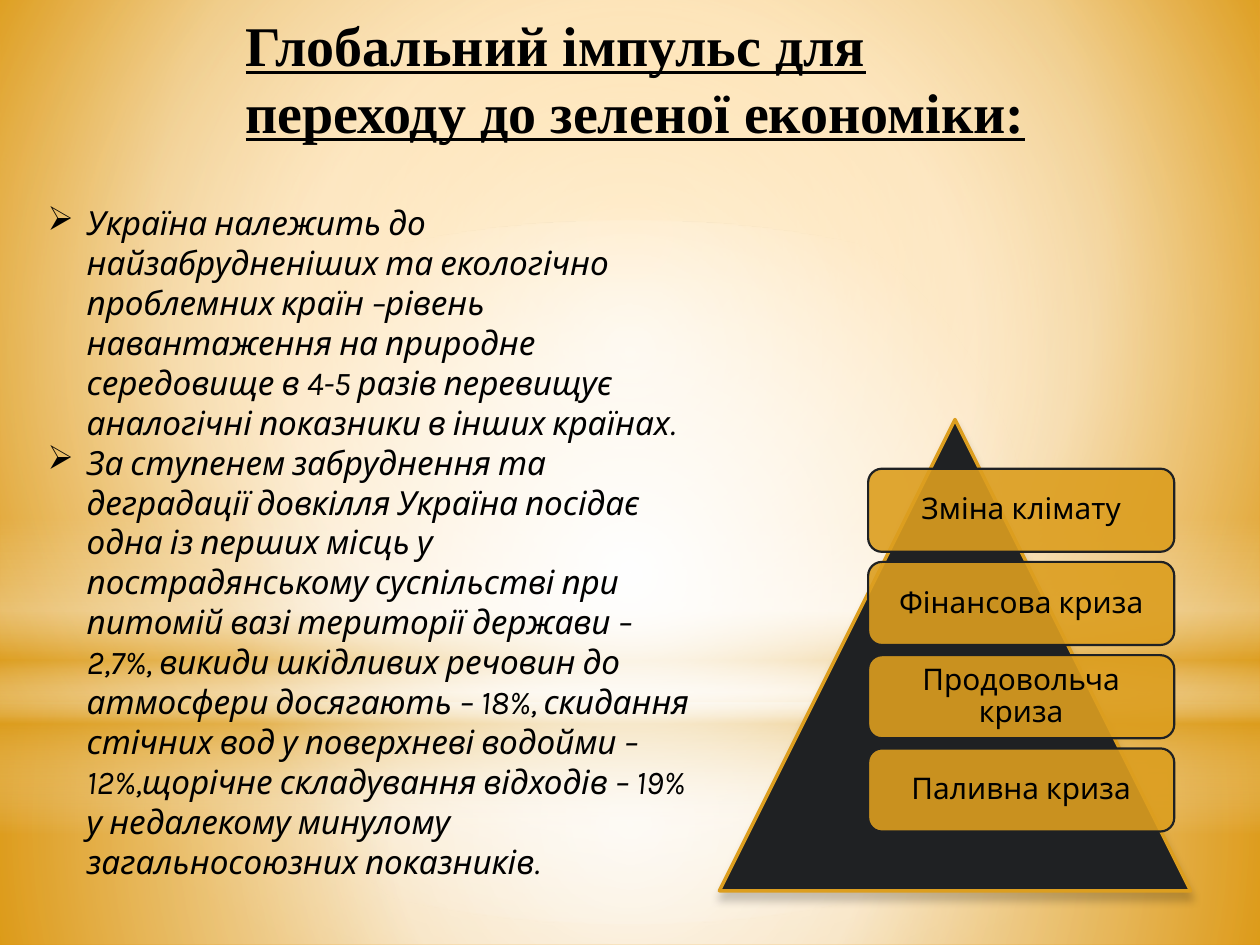
"""Build the slide on the global impulse for the transition to a green economy."""
from dataclasses import dataclass
from typing import Any, NamedTuple

from lxml.etree import SubElement
from pptx import Presentation
from pptx.dml.color import RGBColor
from pptx.enum.shapes import MSO_SHAPE as Shape
from pptx.enum.text import MSO_ANCHOR as Anchor, MSO_AUTO_SIZE as AutoSize, PP_ALIGN as Align
from pptx.oxml.ns import qn
from pptx.oxml.xmlchemy import OxmlElement
from pptx.util import Inches, Pt

WHITE = RGBColor(0xFF, 0xFF, 0xFF)
BLACK = RGBColor(0x00, 0x00, 0x00)
GOLD = RGBColor(0xDC, 0x9E, 0x1F)
CHARCOAL = RGBColor(0x1F, 0x21, 0x23)
ORANGE = RGBColor(0xFF, 0xA6, 0x07)
SAND = RGBColor(0xF9, 0xCD, 0x88)
AMBER = RGBColor(0xE0, 0x8E, 0x02)

CELL = Inches(0.1)
COLUMNS, ROWS = 100, 75
CENTRE = (50, 50, 50, 50)

TITLE = "Глобальний імпульс для переходу до зеленої економіки:"
POINTS = (
    "Україна належить до найзабрудненіших та екологічно проблемних країн –рівень навантаження "
    "на природне середовище в 4-5 разів перевищує аналогічні показники в інших країнах.",
    "За ступенем забруднення та деградації довкілля Україна посідає одна із перших місць у "
    "пострадянському суспільстві при питомій вазі території держави – 2,7%, викиди шкідливих "
    "речовин до атмосфери досягають – 18%, скидання стічних вод у поверхневі водойми – "
    "12%,щорічне складування відходів – 19% у недалекому минулому загальносоюзних показників.",
)
CRISES = ("Зміна клімату", "Фінансова криза", "Продовольча криза", "Паливна криза")

TITLE_FONT = {"name": "Times New Roman", "size": Pt(32), "bold": True, "underline": True}
POINT_FONT = {"name": "Karla", "size": Pt(19), "italic": True}
CARD_FONT = {"name": "Karla", "size": Pt(17)}


class Area(NamedTuple):
    """A rectangle in grid columns and rows."""
    column: float
    row: float
    columns: float
    rows: float

    def lengths(self) -> list[int]:
        return [round(value * CELL) for value in self]


class Stop(NamedTuple):
    """A gradient stop with position and opacity in percent."""
    position: int
    color: RGBColor
    opacity: int = 100


@dataclass(frozen=True)
class Glow:
    """A backdrop shape; a missing focus means a vertical gradient."""
    kind: Shape
    area: Area
    stops: tuple[Stop, ...]
    focus: tuple[int, ...] | None = CENTRE


GLOWS = (
    Glow(Shape.RECTANGLE, Area(0, 55.8, COLUMNS, 19.2),
         (Stop(0, WHITE, 91), Stop(37, WHITE, 76), Stop(100, GOLD, 79))),
    Glow(Shape.RECTANGLE, Area(0, 0, COLUMNS, 55.8),
         (Stop(0, WHITE, 89), Stop(48, WHITE, 62), Stop(100, GOLD, 79))),
    Glow(Shape.RECTANGLE, Area(0, 41.2, COLUMNS, 25),
         (Stop(0, WHITE, 0), Stop(29, WHITE, 30), Stop(45, GOLD, 40),
          Stop(55, WHITE, 26), Stop(65, GOLD, 60), Stop(100, WHITE, 0)), None),
    Glow(Shape.OVAL, Area(0, 17.5, COLUMNS, 55.8), (Stop(0, WHITE), Stop(56, WHITE, 0))),
)
PYRAMID = Area(57.1, 33.3, 37.4, 37.4)
FIRST_CARD = Area(68.9, 37.2, 24.3, 6.6)
CARD_STEP = 7.4


def add_tag(parent: Any, tag: str, **attributes: Any) -> Any:
    """Append an XML element with the given attributes."""
    return SubElement(parent, qn(tag), {key: str(value) for key, value in attributes.items()})


def add_color(parent: Any, color: RGBColor, opacity: int) -> None:
    """Append a colour with its opacity in percent."""
    add_tag(add_tag(parent, "a:srgbClr", val=color), "a:alpha", val=opacity * 1000)


def fill_gradient(fill: Any, element: Any, stops: tuple[Stop, ...],
                  focus: tuple[int, ...] | None) -> None:
    """Give a shape or background a circular or vertical gradient."""
    fill.background()
    gradient = OxmlElement("a:gradFill")
    gradient.set("rotWithShape", "1")
    stop_list = add_tag(gradient, "a:gsLst")
    for stop in stops:
        add_color(add_tag(stop_list, "a:gs", pos=stop.position * 1000), stop.color, stop.opacity)
    if focus is None:
        add_tag(gradient, "a:lin", ang=90 * 60000, scaled=0)
    else:
        sides = {side: share * 1000 for side, share in zip("ltrb", focus)}
        add_tag(add_tag(gradient, "a:path", path="circle"), "a:fillToRect", **sides)
    empty = element.xpath(".//a:noFill")[0]
    empty.getparent().replace(empty, gradient)


def format_font(font: Any, values: dict[str, Any]) -> None:
    """Set black text with the given font values."""
    for name, value in values.items():
        setattr(font, name, value)
    font.color.rgb = BLACK


def add_glow(slide: Any, glow: Glow) -> None:
    """Draw one backdrop shape."""
    shape = slide.shapes.add_shape(glow.kind, *glow.area.lengths())
    shape.shadow.inherit = False
    fill_gradient(shape.fill, shape.element.spPr, glow.stops, glow.focus)
    shape.line.fill.background()


def add_solid(slide: Any, kind: Shape, area: Area, fill: RGBColor, line: RGBColor,
              width: float) -> Any:
    """Draw an outlined shape with a plain fill."""
    shape = slide.shapes.add_shape(kind, *area.lengths())
    shape.shadow.inherit = False
    shape.fill.solid()
    shape.fill.fore_color.rgb = fill
    shape.line.color.rgb = line
    shape.line.width = Pt(width)
    return shape


def add_pyramid(slide: Any) -> None:
    """Draw the pyramid with a soft shadow below it."""
    pyramid = add_solid(slide, Shape.ISOSCELES_TRIANGLE, PYRAMID, CHARCOAL, GOLD, 2)
    effects = pyramid.element.spPr.find(qn("a:effectLst"))
    shadow = add_tag(effects, "a:outerShdw", blurRad=Pt(5), dist=Pt(4), dir=90 * 60000,
                     rotWithShape=0)
    add_color(shadow, BLACK, 20)


def add_card(slide: Any, index: int, text: str) -> None:
    """Draw one labelled card over the pyramid."""
    area = FIRST_CARD._replace(row=FIRST_CARD.row + index * CARD_STEP)
    card = add_solid(slide, Shape.ROUNDED_RECTANGLE, area, GOLD, CHARCOAL, 1.25)
    add_tag(card.element.spPr.xpath("./a:solidFill/a:srgbClr")[0], "a:alpha", val=90000)
    frame = card.text_frame
    for side in ("left", "top", "right", "bottom"):
        setattr(frame, f"margin_{side}", Inches(0.07))
    frame.vertical_anchor = Anchor.MIDDLE
    para = frame.paragraphs[0]
    para.alignment, para.line_spacing = Align.CENTER, 0.9
    span = para.add_run()
    span.text = text
    format_font(span.font, CARD_FONT)


def place_title(slide: Any) -> None:
    """Fill the title placeholder and bring it above the backdrop."""
    title = slide.shapes.title
    title.left, title.top, title.width, title.height = Area(18.5, 0.3, 65.4, 11.8).lengths()
    frame = title.text_frame
    frame.text = TITLE
    frame.vertical_anchor, frame.auto_size = Anchor.TOP, AutoSize.SHAPE_TO_FIT_TEXT
    frame.paragraphs[0].alignment = Align.LEFT
    format_font(frame.paragraphs[0].runs[0].font, TITLE_FONT)
    title.element.getparent().append(title.element)


def add_points(slide: Any) -> None:
    """Write the bulleted points on the left."""
    frame = slide.shapes.add_textbox(*Area(2.8, 15.6, 53.5, 55.4).lengths()).text_frame
    frame.word_wrap, frame.auto_size = True, AutoSize.SHAPE_TO_FIT_TEXT
    frame.text = "\n".join(POINTS)
    for para in frame.paragraphs:
        properties = para._p.get_or_add_pPr()
        properties.set("marL", str(Inches(0.31)))
        properties.set("indent", str(-Inches(0.31)))
        add_tag(properties, "a:buChar", char="➢")
        format_font(para.runs[0].font, POINT_FONT)


def main() -> None:
    """Build and save the deck."""
    deck = Presentation()
    deck.slide_width, deck.slide_height = COLUMNS * CELL, ROWS * CELL
    slide = deck.slides.add_slide(deck.slide_layouts.get_by_name("Title Only"))
    fill_gradient(slide.background.fill, slide.element.cSld.bg,
                  (Stop(0, ORANGE), Stop(60, SAND), Stop(100, AMBER)), (20, 10, 20, 60))
    for glow in GLOWS:
        add_glow(slide, glow)
    add_pyramid(slide)
    for index, crisis in enumerate(CRISES):
        add_card(slide, index, crisis)
    place_title(slide)
    add_points(slide)
    deck.save("out.pptx")


if __name__ == "__main__":
    main()
